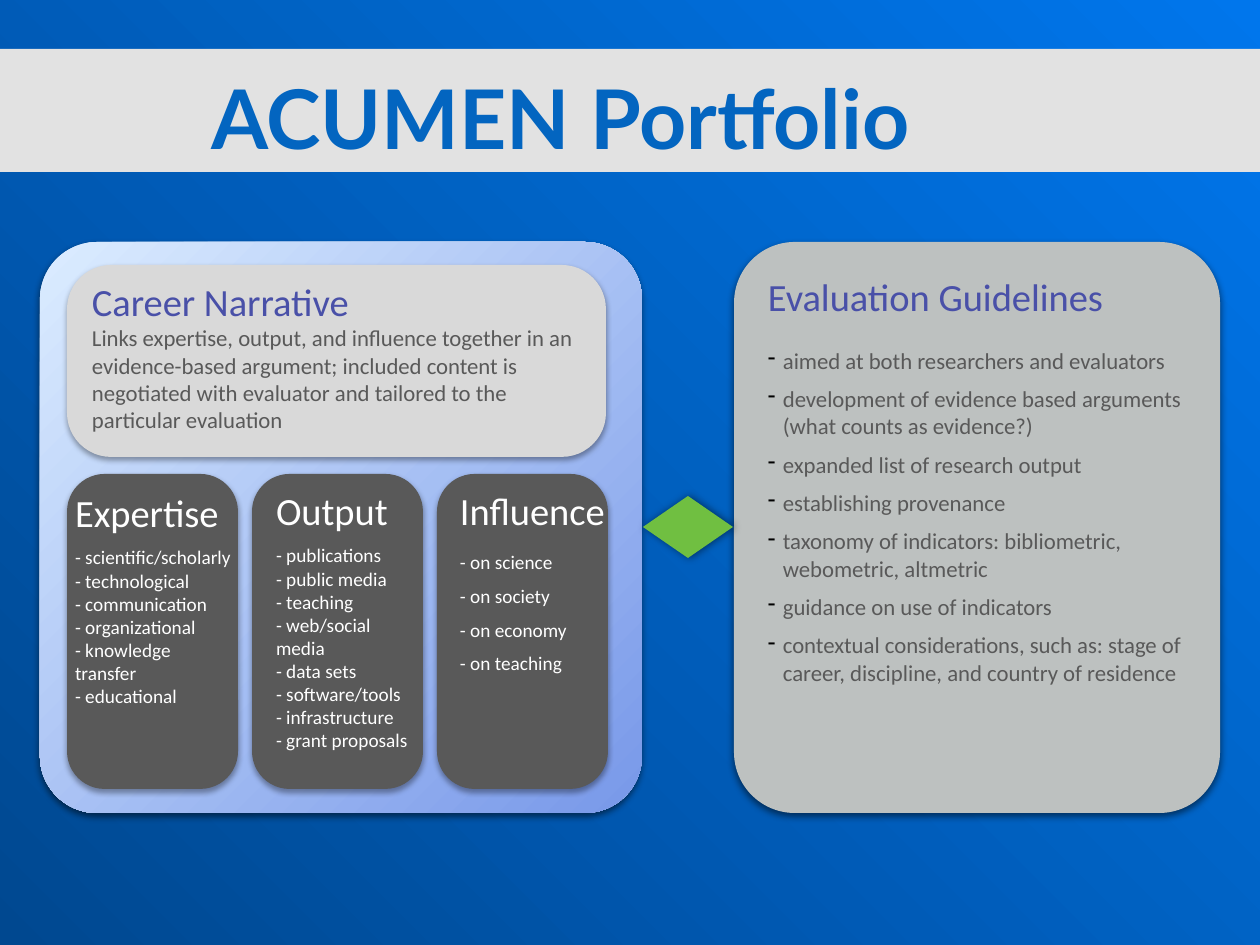
import pptx
import pptx.util
import pptx.dml.color
import pptx.enum.shapes
import pptx.enum.text
import pptx.oxml
import pptx.oxml.ns

UNIT = 914400 / 126
KIND = pptx.enum.shapes.MSO_SHAPE
SPACE = 'xmlns:a="http://schemas.openxmlformats.org/drawingml/2006/main"'
SOFT = ("000000", 35, 3, 1.8, 90)
DEEP = ("000000", 50, 4, 2, 90)
SIDE = ("000000", 50, 5, 1, 0)

HEAD = {"size": 22, "name": "Calibri", "color": "4950A8"}
BODY = {"size": 13, "name": "Calibri", "color": "595959"}
LABEL = {"size": 22, "name": "Calibri", "color": "FFFFFF"}
ITEM = {"size": 11, "name": "Calibri", "color": "FFFFFF"}
TITLE = {"size": 47, "name": "Lato", "color": "0365C0", "bold": True}

STORY = ("Links expertise, output, and influence together in an evidence-based "
         "argument; included content is negotiated with evaluator and tailored "
         "to the particular evaluation")
COLUMNS = [
    ("Expertise", ["scientific/scholarly", "technological", "communication",
                   "organizational", "knowledge transfer", "educational"],
     (2, 9, 169, 273), 6, 0),
    ("Output", ["publications", "public media", "teaching", "web/social media",
                "data sets", "software/tools", "infrastructure", "grant proposals"],
     (18, 7, 144, 319), 6, 0),
    ("Influence", ["on science", "on society", "on economy", "on teaching"],
     (17, 7, 175, 275), 10, 6),
]
GUIDES = [
    "aimed at both researchers and evaluators",
    "development of evidence based arguments (what counts as evidence?)",
    "expanded list of research output",
    "establishing provenance",
    "taxonomy of indicators: bibliometric, webometric, altmetric",
    "guidance on use of indicators",
    "contextual considerations, such as: stage of career, discipline, and "
    "country of residence",
]


def px(count):
    return pptx.util.Emu(round(count * UNIT))


def tint(code):
    return pptx.dml.color.RGBColor.from_string(code)


def node(text):
    return pptx.oxml.parse_xml(text)


def style(font, form):
    for key, value in form.items():
        if key == "color":
            font.color.rgb = tint(value)
        else:
            setattr(font, key, pptx.util.Pt(value) if key == "size" else value)


def blend(fill, first, last):
    fill.gradient()
    for stop, code in zip(fill.gradient_stops, (first, last)):
        stop.color.rgb = tint(code)


def shade(shape, glow):
    code, alpha, blur, gap, turn = glow
    shape.shadow.inherit = False
    effect = shape._element.spPr.find(pptx.oxml.ns.qn("a:effectLst"))
    effect.append(node(
        f'<a:outerShdw {SPACE} blurRad="{int(blur * 12700)}" '
        f'dist="{int(gap * 12700)}" dir="{turn * 60000}" rotWithShape="0">'
        f'<a:srgbClr val="{code}"><a:alpha val="{alpha * 1000}"/></a:srgbClr>'
        '</a:outerShdw>'))


def block(slide, kind, box, code, glow=None, bends=()):
    shape = slide.shapes.add_shape(kind, *map(px, box))
    shape.shadow.inherit = False
    shape.line.fill.background()
    shape.fill.solid()
    shape.fill.fore_color.rgb = tint(code)
    for index, bend in enumerate(bends):
        shape.adjustments[index] = bend
    if glow:
        shade(shape, glow)
    return shape


def setup(frame, inset, anchor):
    form = {"word_wrap": True, "auto_size": pptx.enum.text.MSO_AUTO_SIZE.NONE,
            "vertical_anchor": anchor}
    form.update({f"margin_{side}": px(inset)
                 for side in ("left", "right", "top", "bottom")})
    for key, value in form.items():
        setattr(frame, key, value)


def write(slide, box, inset, lines):
    frame = slide.shapes.add_textbox(*map(px, box)).text_frame
    setup(frame, inset, pptx.enum.text.MSO_ANCHOR.TOP)
    for index, (text, form, gap, dash) in enumerate(lines):
        para = frame.add_paragraph() if index else frame.paragraphs[0]
        if dash:
            bullet(para)
        if gap:
            para.space_before = pptx.util.Pt(gap)
        run = para.add_run()
        run.text = text
        style(run.font, form)


def bullet(para):
    props = para._p.get_or_add_pPr()
    props.set("marL", str(px(15)))
    props.set("indent", str(-px(15)))
    props.append(node(f'<a:buClr {SPACE}><a:srgbClr val="000000"/></a:buClr>'))
    props.append(node(f'<a:buChar {SPACE} char="-"/>'))


def backdrop(slide):
    blend(slide.background.fill, "0076EC", "004890")
    grad = slide._element.find(".//" + pptx.oxml.ns.qn("a:gradFill"))
    line = grad.find(pptx.oxml.ns.qn("a:lin"))
    grad.replace(line, node(
        f'<a:path {SPACE} path="circle">'
        '<a:fillToRect l="100000" t="0" r="0" b="100000"/></a:path>'))


def banner(slide, box):
    left, top, wide, high = box
    band = block(slide, KIND.RECTANGLE, box, "E2E2E2")
    title = slide.shapes.title
    band._element.addnext(title._element)
    place = {"left": left + 207, "top": top + 15, "width": 864, "height": 105}
    for key, value in place.items():
        setattr(title, key, px(value))
    setup(title.text_frame, 4, pptx.enum.text.MSO_ANCHOR.MIDDLE)
    para = title.text_frame.paragraphs[0]
    para.alignment = pptx.enum.text.PP_ALIGN.LEFT
    run = para.add_run()
    run.text = "ACUMEN Portfolio"
    style(run.font, TITLE)


def story(slide, box):
    left, top, wide, high = box
    block(slide, KIND.ROUNDED_RECTANGLE, box, "D9D9D9", SOFT, [0.23])
    write(slide, (left + 19, top + 7, wide - 24, high - 28), 6,
          [("Career Narrative", HEAD, 0, False), (STORY, BODY, 0, False)])


def column(slide, box, label, items, inner, first, gap):
    left, top, wide, high = box
    block(slide, KIND.ROUNDED_RECTANGLE, box, "595959", SOFT, [0.22])
    lines = [(label, LABEL, 0, False)]
    for index, item in enumerate(items):
        lines.append((f"- {item}", ITEM, gap if index else first, False))
    write(slide, (left + inner[0], top + inner[1], *inner[2:]), 6, lines)


def profile(slide, box):
    left, top, wide, high = box
    panel = block(slide, KIND.ROUNDED_RECTANGLE, box, "DBECFF", DEEP, [0.1])
    blend(panel.fill, "DBECFF", "7898E9")
    panel.fill.gradient_angle = 315
    story(slide, (left + 27, top + 23, 539, 192))
    for index, parts in enumerate(COLUMNS):
        column(slide, (left + 27 + 185 * index, top + 232, 171, 315), *parts)


def guide(slide, box):
    left, top, wide, high = box
    block(slide, KIND.ROUNDED_RECTANGLE, box, "BDC1C0", DEEP, [0.125])
    lines = [("Evaluation Guidelines", HEAD, 0, False)]
    for index, text in enumerate(GUIDES):
        lines.append((text, BODY, 6.3 if index else 15.5, True))
    write(slide, (left + 31, top + 28, wide - 60, high - 34), 3, lines)


def main():
    deck = pptx.Presentation()
    deck.slide_width, deck.slide_height = px(1260), px(945)
    slide = deck.slides.add_slide(deck.slide_layouts[5])
    backdrop(slide)
    banner(slide, (0, 49, 1260, 123))
    profile(slide, (40, 242, 602, 571))
    guide(slide, (734, 242, 486, 571))
    block(slide, KIND.LEFT_RIGHT_ARROW, (643, 496, 90, 62), "70BF41", SIDE,
          [0.32, 0.75])
    deck.save("out.pptx")


if __name__ == "__main__":
    main()
